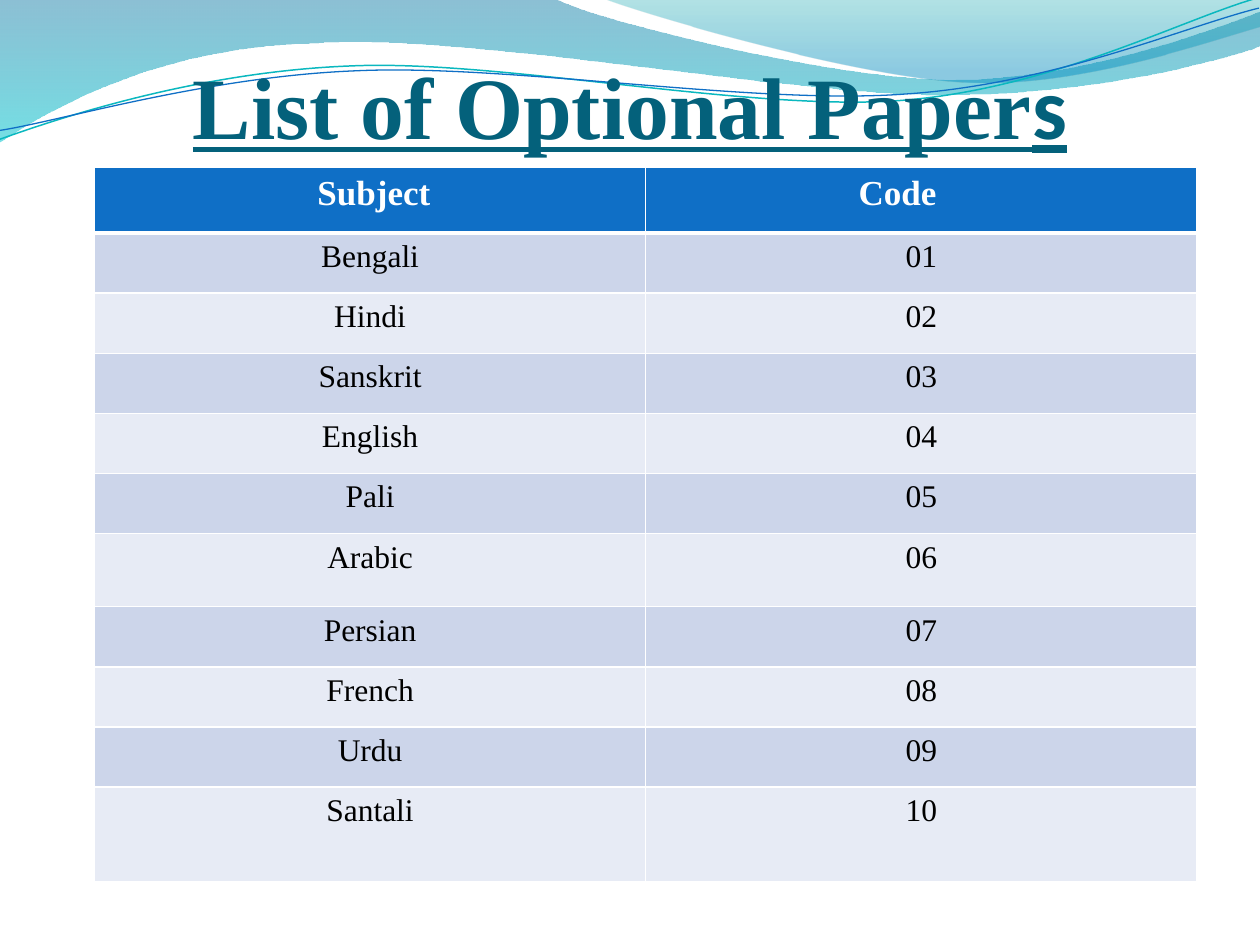
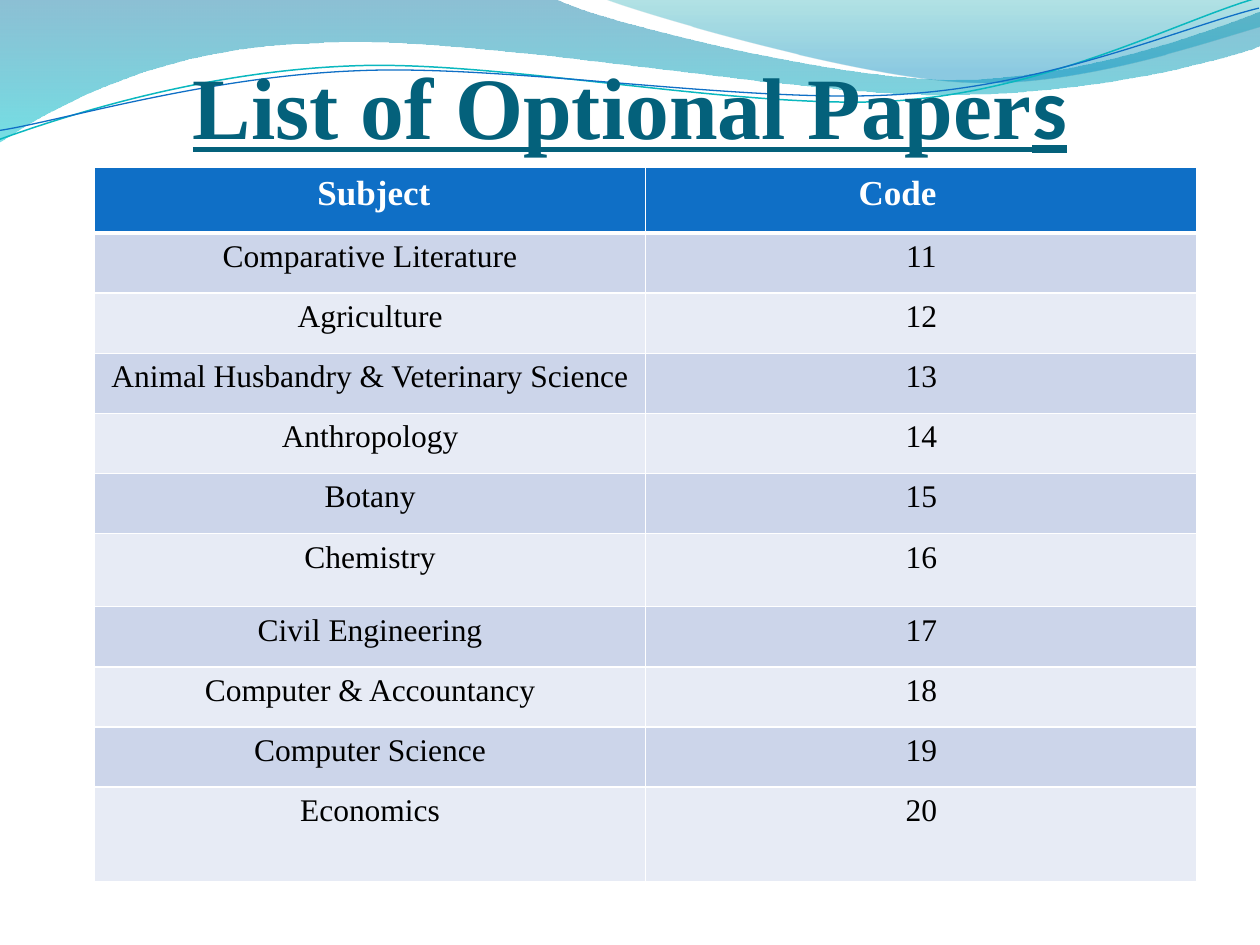
from lxml import etree
from pptx import Presentation
from pptx.dml.color import RGBColor
from pptx.enum.text import MSO_ANCHOR, PP_ALIGN
from pptx.oxml.ns import qn
from pptx.util import Inches, Pt

CENTER, LEFT = PP_ALIGN.CENTER, PP_ALIGN.LEFT
BOTTOM = MSO_ANCHOR.BOTTOM

WHITE = RGBColor(0xFF, 0xFF, 0xFF)
BLACK = RGBColor(0, 0, 0)
TITLE_TEAL = RGBColor(0x04, 0x61, 0x7B)
HEADER_BLUE = RGBColor(0x0F, 0x6F, 0xC6)
LINE_TEAL = RGBColor(0x0A, 0xB8, 0xBF)
BAND_DARK = RGBColor(0xCC, 0xD5, 0xEA)
BAND_LIGHT = RGBColor(0xE7, 0xEB, 0xF5)
WAVE_TOP = RGBColor(0x00, 0x74, 0xA1)
WAVE_BOTTOM = RGBColor(0x00, 0xC6, 0xCF)
CREST_TOP = RGBColor(0x00, 0xA1, 0xA9)
CREST_BOTTOM = RGBColor(0x00, 0x8B, 0xBF)

SERIF, SANS = "Times New Roman", "Calibri"
STRAND_ROTATION = 357.3
TABLE_HEIGHT = 5.67
SPECIAL_ROWS = {0: 0.52, 6: 0.58, 10: 0.75}
HEADER_INDENTS = (1.77, 1.69)

WAVE = [[(0, 0)], [(4.4, -0.01)],
        [(4.76, 0.17), (6.64, 0.63), (7.58, 0.63)],
        [(8.53, 0.63), (9.58, 0.26), (10, 0.09)], [(10.01, 0.36)],
        [(9.83, 0.44), (8.7, 0.76), (7.46, 0.75)],
        [(6.22, 0.75), (3.82, 0.28), (2.57, 0.34)],
        [(1.29, 0.36), (0.46, 0.83), (-0.01, 1.13)]]
CREST = [[(4.79, -0.01)],
         [(5.09, 0.11), (6.82, 0.62), (7.69, 0.65)],
         [(8.56, 0.69), (9.61, 0.32), (10, 0.21)], [(10, 0)]]
TEAL_STRAND = [[(-0.02, 0.87)],
               [(0.47, 0.72), (1.58, 0.41), (2.78, 0.42)],
               [(3.96, 0.42), (5.91, 0.93), (7.12, 0.9)],
               [(8.32, 0.87), (9.4, 0.36), (10, 0.22)]]
BLUE_STRAND = [[(-0.02, 0.8)],
               [(0.46, 0.75), (1.64, 0.45), (2.83, 0.46)],
               [(4.03, 0.46), (5.96, 0.88), (7.16, 0.85)],
               [(8.35, 0.83), (9.41, 0.42), (10.01, 0.3)]]

SUBJECT_LISTS = [
    ["Bengali", "Hindi", "Sanskrit", "English", "Pali", "Arabic", "Persian",
     "French", "Urdu", "Santali"],
    ["Comparative Literature", "Agriculture",
     "Animal Husbandry & Veterinary Science", "Anthropology", "Botany",
     "Chemistry", "Civil Engineering", "Computer & Accountancy",
     "Computer Science", "Economics"],
]


def add_outline(slide, left, top, segments, close):
    """Draw lines and cubic curves offset by left and top."""
    points = [(Inches(left + x), Inches(top + y))
              for segment in segments for x, y in segment]
    builder = slide.shapes.build_freeform(*points[0], scale=1.0)
    builder.add_line_segments(points[1:], close=close)
    shape = builder.convert_to_shape()
    shape.shadow.inherit = False
    lines = iter(list(shape.element.spPr.iter(qn("a:lnTo"))))
    for segment in segments[1:]:
        steps = [next(lines) for _ in segment]
        if len(steps) == 3:
            curve = etree.Element(qn("a:cubicBezTo"))
            steps[0].addprevious(curve)
            for step in steps:
                curve.append(step[0])
                step.getparent().remove(step)
    return shape


def add_wave(slide, left, top, segments, stops):
    """Draw a closed wave with a translucent downward gradient."""
    shape = add_outline(slide, left, top, segments, True)
    shape.line.fill.background()
    shape.fill.gradient()
    shape.fill.gradient_angle = 270
    for stop, (position, color, _) in zip(shape.fill.gradient_stops, stops):
        stop.position = position
        stop.color.rgb = color
    colors = list(shape.element.spPr.iter(qn("a:srgbClr")))
    for color, (_, _, opacity) in zip(colors, stops):
        etree.SubElement(color, qn("a:alpha"), val=str(opacity * 1000))


def add_strand(slide, left, top, segments, color, width):
    """Draw a thin, slightly turned open curve."""
    shape = add_outline(slide, left, top, segments, False)
    shape.rotation = STRAND_ROTATION
    shape.fill.background()
    shape.line.color.rgb = color
    shape.line.width = Pt(width)


def add_wave_band(slide, left, top):
    """Draw the waves and strands across the top of a slide."""
    add_wave(slide, left, top, WAVE,
             [(0, WAVE_TOP, 45), (1, WAVE_BOTTOM, 55)])
    add_wave(slide, left, top, CREST,
             [(0, CREST_TOP, 30), (0.8, CREST_BOTTOM, 45)])
    add_strand(slide, left, top, TEAL_STRAND, LINE_TEAL, 0.85)
    add_strand(slide, left, top, BLUE_STRAND, HEADER_BLUE, 0.75)


def add_run(paragraph, text, size, color, bold=False, font=SERIF):
    """Append a formatted run and return it."""
    run = paragraph.add_run()
    run.text = text
    run.font.name = font
    run.font.size = Pt(size)
    run.font.bold = bold
    run.font.color.rgb = color
    return run


def add_title(slide, left, top, width, height):
    """Place the underlined title at the bottom of its box."""
    box = slide.shapes.add_textbox(Inches(left), Inches(top),
                                   Inches(width), Inches(height))
    frame = box.text_frame
    frame.word_wrap = True
    frame.vertical_anchor = BOTTOM
    frame.margin_left = frame.margin_right = frame.margin_bottom = 0
    frame.margin_top = Inches(0.05)
    paragraph = frame.paragraphs[0]
    paragraph.alignment = CENTER
    for text, font in (("List of Optional Paper", SERIF), ("s", SANS)):
        add_run(paragraph, text, 50, TITLE_TEAL, True, font).font.underline = True


def add_borders(cell, top_width, bottom_width):
    """Give a cell white borders."""
    properties = cell._tc.get_or_add_tcPr()
    for side, width in (("L", 1), ("R", 1), ("T", top_width), ("B", bottom_width)):
        line = etree.SubElement(properties, qn(f"a:ln{side}"), w=str(Pt(width)))
        fill = etree.SubElement(line, qn("a:solidFill"))
        etree.SubElement(fill, qn("a:srgbClr"), val=str(WHITE))


def add_subject_table(slide, left, top, width, height, subjects, first_code):
    """Place the banded table of subjects and consecutive codes."""
    rows = [("Subject", "Code")]
    rows += [(subject, f"{code:02}") for code, subject in enumerate(subjects, first_code)]
    plain_height = (height - sum(SPECIAL_ROWS.values())) / (len(rows) - len(SPECIAL_ROWS))
    table = slide.shapes.add_table(len(rows), 2, Inches(left), Inches(top),
                                   Inches(width), Inches(height)).table
    for row_index, texts in enumerate(rows):
        table.rows[row_index].height = Inches(SPECIAL_ROWS.get(row_index, plain_height))
        header = row_index == 0
        band = BAND_DARK if row_index % 2 else BAND_LIGHT
        for column_index, text in enumerate(texts):
            cell = table.cell(row_index, column_index)
            add_borders(cell, 3 if row_index == 1 else 1, 3 if header else 1)
            cell.fill.solid()
            cell.fill.fore_color.rgb = HEADER_BLUE if header else band
            paragraph = cell.text_frame.paragraphs[0]
            paragraph.alignment = LEFT if header else CENTER
            if header:
                cell.margin_left = Inches(HEADER_INDENTS[column_index])
                add_run(paragraph, text, 20, WHITE, True)
            else:
                add_run(paragraph, text, 18, BLACK)


def add_subject_slide(presentation, subjects, first_code):
    """Build one slide listing ten optional papers."""
    slide = presentation.slides.add_slide(presentation.slide_layouts[6])
    add_wave_band(slide, 0, 0)
    add_title(slide, 0.5, 0, 9, 1.25)
    add_subject_table(slide, 0.75, 1.33, 8.75, TABLE_HEIGHT, subjects, first_code)


def main():
    """Build and save the presentation."""
    presentation = Presentation()
    presentation.slide_width = Inches(10)
    presentation.slide_height = Inches(7.5)
    first_code = 1
    for subjects in SUBJECT_LISTS:
        add_subject_slide(presentation, subjects, first_code)
        first_code += len(subjects)
    presentation.save("out.pptx")


if __name__ == "__main__":
    main()
